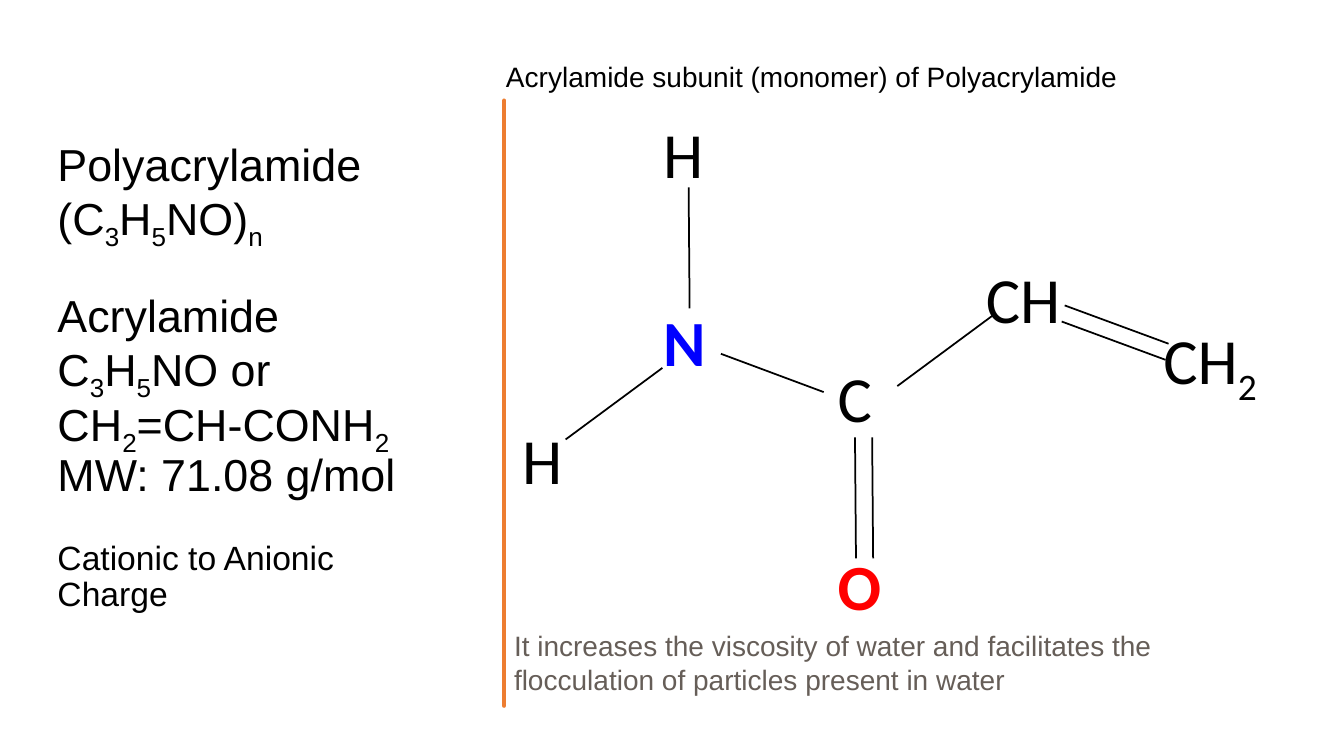
from lxml.etree import SubElement
from pptx import Presentation
from pptx.dml.color import RGBColor
from pptx.enum.shapes import MSO_CONNECTOR
from pptx.enum.text import MSO_ANCHOR, MSO_AUTO_SIZE, PP_ALIGN
from pptx.oxml.ns import qn
from pptx.util import Inches, Pt

BLACK, BLUE, RED, GREY, ORANGE = "000000", "0000FF", "FF0000", "665E58", "ED7D31"

FORMULA_LINES = [
    ("Polyacrylamide", 32, 0),
    ("(C_3H_5NO)_n", 32, 0),
    ("Acrylamide", 32, 34),
    ("C_3H_5NO or", 32, 0),
    ("CH_2=CH-CONH_2", 32, 0),
    ("MW: 71.08 g/mol", 32, 0),
    ("Cationic to Anionic Charge", 24, 29),
]

ATOMS = [
    ("H", 6.48, 1.17, 0.74, BLACK),
    ("N", 6.48, 3.03, 0.76, BLUE),
    ("H", 5.08, 4.21, 0.74, BLACK),
    ("C", 8.21, 3.59, 0.69, BLACK),
    ("O", 8.21, 5.46, 0.76, RED),
    ("CH", 9.68, 2.61, 1.02, BLACK),
    ("CH_2", 11.44, 3.14, 1.19, BLACK),
]

SINGLE_BONDS = [
    (6.83, 1.86, 6.84, 3.06),
    (6.57, 3.65, 5.61, 4.36),
    (8.17, 3.89, 7.15, 3.51),
    (9.86, 3.12, 8.9, 3.83),
]
DOUBLE_BONDS = [
    ((11.59, 3.41, 10.56, 3.03), (-0.03, 0.16)),
    ((8.48, 4.34, 8.49, 5.54), (0.17, 0)),
]

RIGHT_EDGE = [
    (4.75, 0.84), (4.76, 1.15), (4.75, 1.46), (4.74, 1.86), (4.75, 2.26),
    (4.745, 2.6), (4.75, 2.94), (4.76, 3.3), (4.75, 3.56), (4.76, 3.95),
    (4.75, 4.36), (4.73, 4.73), (4.75, 5.1), (4.765, 5.5), (4.75, 5.84),
    (4.74, 6.3), (4.75, 6.76),
]
LEFT_EDGE = [
    (4.73, 6.76), (4.72, 6.4), (4.73, 6.13), (4.735, 5.85), (4.73, 5.57),
    (4.72, 5.2), (4.73, 4.77), (4.72, 4.46), (4.73, 4.15), (4.74, 3.85),
    (4.73, 3.35), (4.72, 2.9), (4.73, 2.5), (4.735, 2.1), (4.71, 1.7),
    (4.74, 1.2), (4.73, 0.84),
]


def color(value):
    """Turn a hex string into a colour."""
    return RGBColor.from_string(value)


def write(para, text, *, size, font="Arial", fill=BLACK, bold=False):
    """Fill a paragraph; a character after an underscore is a subscript."""
    first, *rest = text.split("_")
    spans = [(first, False)]
    for part in rest:
        spans += [(part[0], True), (part[1:], False)]
    for words, subscript in spans:
        if not words:
            continue
        span = para.add_run()
        span.text = words
        span.font.size = Pt(size)
        span.font.name = font
        span.font.bold = bold
        span.font.color.rgb = color(fill)
        if subscript:
            span.font._element.set("baseline", "-25000")


def add_formulas(page):
    """Set the formula lines in the title placeholder."""
    title = page.shapes.title
    title.left, title.top = Inches(0.47), Inches(0.7)
    title.width, title.height = Inches(3.96), Inches(6.11)
    frame = title.text_frame
    frame.auto_size = MSO_AUTO_SIZE.NONE
    frame.vertical_anchor = MSO_ANCHOR.MIDDLE
    frame.word_wrap = True
    for index, (text, size, gap) in enumerate(FORMULA_LINES):
        para = frame.add_paragraph() if index else frame.paragraphs[0]
        para.alignment = PP_ALIGN.LEFT
        para.line_spacing = 0.9
        para.space_before = Pt(gap)
        write(para, text, size=size)


def add_text(page, text, left, top, width, height, *, wrap=False, **style):
    """Add a text box and return its paragraph."""
    box = page.shapes.add_textbox(Inches(left), Inches(top), Inches(width), Inches(height))
    box.text_frame.word_wrap = wrap
    para = box.text_frame.paragraphs[0]
    write(para, text, **style)
    return para


def add_atom(page, symbol, left, top, width, fill):
    """Add an atom label."""
    para = add_text(page, symbol, left, top, width, 0.83, size=46,
                    font="Calibri", fill=fill, bold=fill != BLACK)
    para.line_spacing = 0.9
    para.space_after = Pt(6)


def add_bond(page, *ends):
    """Draw one bond line."""
    bond = page.shapes.add_connector(MSO_CONNECTOR.STRAIGHT, *map(Inches, ends))
    bond.line.color.rgb = color(BLACK)
    bond.line.width = Pt(1.25)
    SubElement(bond._element.spPr, qn("a:effectLst"))


def add_divider(page):
    """Draw the wavy brush stroke between the columns."""
    points = RIGHT_EDGE + LEFT_EDGE
    builder = page.shapes.build_freeform(*points[0], scale=Inches(1))
    builder.add_line_segments(points[1:], close=True)
    stroke = builder.convert_to_shape()
    stroke.shadow.inherit = False
    stroke.fill.solid()
    stroke.fill.fore_color.rgb = color(ORANGE)
    stroke.line.color.rgb = color(ORANGE)
    stroke.line.width = Pt(3.25)


def main():
    """Build the slide."""
    deck = Presentation()
    deck.slide_width, deck.slide_height = Inches(13.33), Inches(7.5)
    page = deck.slides.add_slide(deck.slide_layouts[5])
    add_formulas(page)
    add_divider(page)
    for ends in SINGLE_BONDS:
        add_bond(page, *ends)
    for (x1, y1, x2, y2), (dx, dy) in DOUBLE_BONDS:
        add_bond(page, x1, y1, x2, y2)
        add_bond(page, x1 + dx, y1 + dy, x2 + dx, y2 + dy)
    for atom in ATOMS:
        add_atom(page, *atom)
    add_text(page, "Acrylamide subunit (monomer) of Polyacrylamide",
             4.92, 0.54, 6.31, 0.44, size=20)
    add_text(page, "It increases the viscosity of water and facilitates the "
             "flocculation of particles present in water",
             5, 6.19, 7.63, 0.77, wrap=True, size=20, fill=GREY)
    deck.save("out.pptx")


if __name__ == "__main__":
    main()
